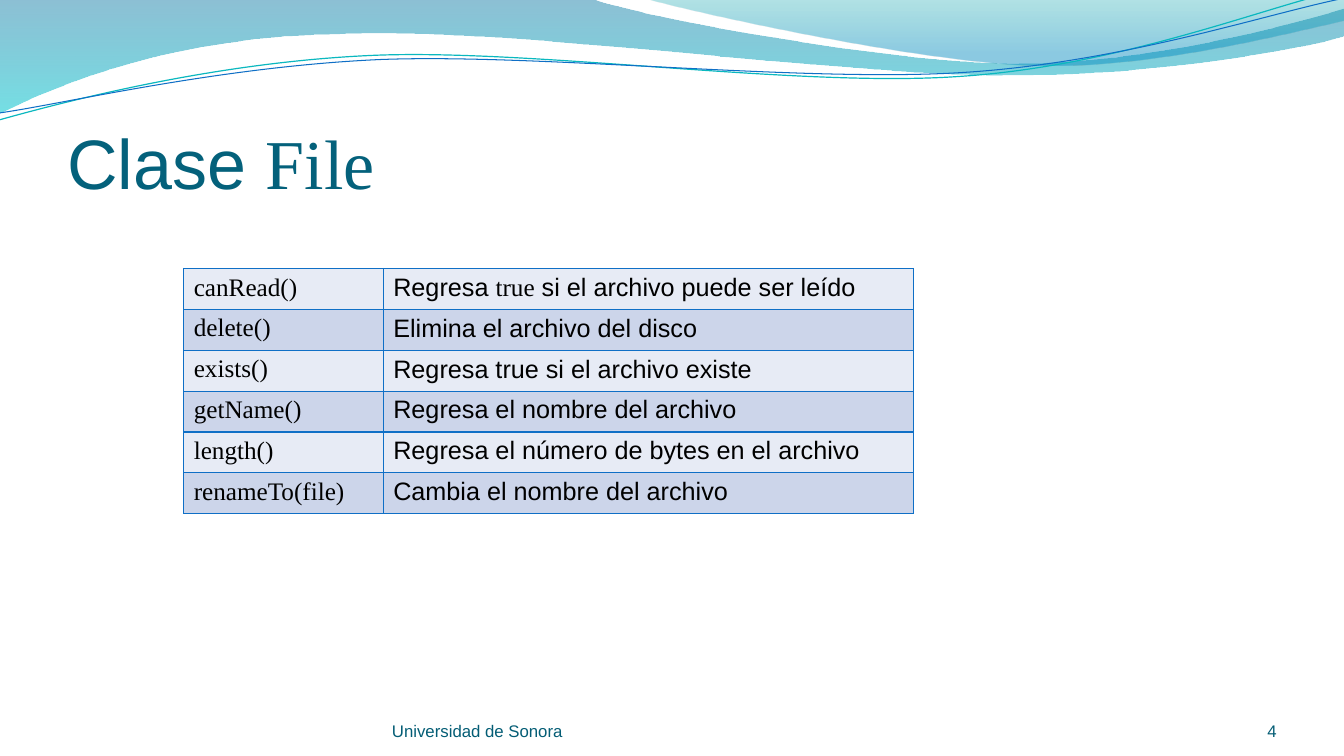
from dataclasses import dataclass

from lxml import etree
from pptx import Presentation
from pptx.dml.color import RGBColor
from pptx.enum.text import MSO_ANCHOR, PP_ALIGN
from pptx.oxml.ns import qn
from pptx.util import Pt

BOTTOM = MSO_ANCHOR.BOTTOM
LEFT, RIGHT = PP_ALIGN.LEFT, PP_ALIGN.RIGHT


@dataclass(frozen=True)
class Theme:
    sans: str = "Arial"
    serif: str = "Times New Roman"
    title_size: int = 50
    table_size: int = 18
    footer_size: int = 12
    title_color: str = "04617B"
    footer_color: str = "045D75"
    table_color: str = "000000"
    border_color: str = "0F6FC6"
    row_fills: tuple = ("E7EBF5", "CCD5EA")
    # Gradient stops: position, colour, opacity in percent
    wide_wave: tuple = ((0, "0074A1", 45), (1, "00C6CF", 55))
    right_wave: tuple = ((0, "00A1A9", 30), (0.8, "008BBF", 45))
    teal_line: str = "0AB8BF"
    blue_line: str = "0F6FC6"


def rgb(color):
    return RGBColor.from_string(color)


def write(text_frame, *runs, size, color, align=LEFT):
    """Fill the first paragraph with (text, font name) runs."""
    paragraph = text_frame.paragraphs[0]
    paragraph.alignment = align
    for text, font_name in runs:
        run = paragraph.add_run()
        run.text = text
        run.font.name = font_name
        run.font.size = Pt(size)
        run.font.color.rgb = rgb(color)


class SlideBuilder:
    def __init__(self, slide, theme):
        self.slide = slide
        self.theme = theme

    def outline(self, start, segments, close):
        """Draw line ends (x, y) and cubic curves (six numbers)."""
        builder = self.slide.shapes.build_freeform(*map(Pt, start))
        ends = [(Pt(segment[-2]), Pt(segment[-1])) for segment in segments]
        builder.add_line_segments(ends, close=close)
        shape = builder.convert_to_shape()
        shape.shadow.inherit = False
        # Bend the straight segments that have control points
        for element, segment in zip(list(shape.element.iter(qn("a:lnTo"))), segments):
            if len(segment) == 6:
                bend = etree.Element(qn("a:cubicBezTo"))
                for x, y in zip(segment[::2], segment[1::2]):
                    etree.SubElement(bend, qn("a:pt"), x=str(Pt(x) - shape.left),
                                     y=str(Pt(y) - shape.top))
                element.getparent().replace(element, bend)
        return shape

    def wave(self, start, segments, stops):
        shape = self.outline(start, segments, close=True)
        shape.line.fill.background()
        shape.fill.gradient()
        shape.fill.gradient_angle = 270
        for stop, (position, color, _) in zip(shape.fill.gradient_stops, stops):
            stop.position = position
            stop.color.rgb = rgb(color)
        for element, (_, _, opacity) in zip(shape.element.iter(qn("a:srgbClr")), stops):
            etree.SubElement(element, qn("a:alpha"), val=str(opacity * 1000))

    def curve(self, start, segments, color, width):
        shape = self.outline(start, segments, close=False)
        shape.fill.background()
        shape.line.color.rgb = rgb(color)
        shape.line.width = Pt(width)

    def text(self, box, *runs, bottom_margin=0, top_margin=0, **style):
        shape = self.slide.shapes.add_textbox(*map(Pt, box))
        frame = shape.text_frame
        frame.word_wrap = True
        frame.vertical_anchor = BOTTOM
        frame.margin_left = frame.margin_right = 0
        frame.margin_top, frame.margin_bottom = Pt(top_margin), Pt(bottom_margin)
        write(frame, *runs, **style)

    def border(self, cell, width):
        properties = cell._tc.get_or_add_tcPr()
        for side in ("lnL", "lnR", "lnT", "lnB"):
            line = etree.SubElement(properties, qn(f"a:{side}"), w=str(Pt(width)))
            fill = etree.SubElement(line, qn("a:solidFill"))
            etree.SubElement(fill, qn("a:srgbClr"), val=self.theme.border_color)

    def table(self, left, top, widths, row_height, rows):
        theme = self.theme
        frame = self.slide.shapes.add_table(
            len(rows), len(widths), Pt(left), Pt(top),
            Pt(sum(widths)), Pt(row_height * len(rows)))
        table = frame.table
        table.first_row = table.horz_banding = False
        for column, width in zip(table.columns, widths):
            column.width = Pt(width)
        for index, contents in enumerate(rows):
            table.rows[index].height = Pt(row_height)
            for cell, runs in zip(table.rows[index].cells, contents):
                self.border(cell, 1)
                cell.fill.solid()
                cell.fill.fore_color.rgb = rgb(theme.row_fills[index % 2])
                write(cell.text_frame, *runs, size=theme.table_size,
                      color=theme.table_color)


def main():
    presentation = Presentation()
    presentation.slide_width, presentation.slide_height = Pt(960), Pt(540)
    theme = Theme()
    slide = presentation.slides.add_slide(presentation.slide_layouts[6])
    builder = SlideBuilder(slide, theme)

    # Waves along the top edge
    builder.wave((0, 0), [
        (422.6, -0.7),
        (456.5, 12.2, 637.2, 45.4, 727.9, 45.4),
        (819.4, 45.4, 920.2, 18.7, 960, 6.5),
        (961.2, 25.9),
        (943.9, 31.7, 835.2, 54.7, 715.7, 54),
        (596.9, 54, 366.5, 20.2, 247, 24.5),
        (123.8, 25.9, 43.9, 59.8, -0.7, 81.4),
        (0, 0),
    ], theme.wide_wave)
    builder.wave((460, -0.7), [
        (488.9, 7.9, 654.5, 44.6, 738, 46.8),
        (821.5, 49.7, 923, 23, 960, 15.1),
        (960, 0),
        (460, -0.7),
    ], theme.right_wave)

    # Thin lines following the waves
    builder.curve((-0.7, 85.7), [
        (46.1, 72.7, 151.9, 44.6, 265.7, 39.6),
        (379.4, 34.6, 568.8, 62.6, 684, 54.7),
        (799.2, 47.5, 901.4, 5.8, 958.3, -7.2),
    ], theme.teal_line, 0.85)
    builder.curve((0, 80.6), [
        (45.4, 74.2, 157, 47.5, 272.2, 42.5),
        (386.6, 38.2, 573.1, 59, 687.6, 51.8),
        (802.8, 44.6, 903.6, 10.1, 960.5, -1.4),
    ], theme.blue_line, 0.75)

    # Title
    builder.text((48, 55.4, 864, 90), ("Clase ", theme.sans), ("File", theme.serif),
                 top_margin=3.6, size=theme.title_size, color=theme.title_color)

    # Methods of the class
    methods = [
        ("canRead()", [("Regresa ", theme.sans), ("true", theme.serif),
                       (" si el archivo puede ser leído", theme.sans)]),
        ("delete()", [("Elimina el archivo del disco", theme.sans)]),
        ("exists()", [("Regresa true si el archivo existe", theme.sans)]),
        ("getName()", [("Regresa el nombre del archivo", theme.sans)]),
        ("length()", [("Regresa el número de bytes en el archivo", theme.sans)]),
        ("renameTo(file)", [("Cambia el nombre del archivo", theme.sans)]),
    ]
    rows = [([(name, theme.serif)], description) for name, description in methods]
    builder.table(131.25, 191.75, (142.5, 378.75), 29.2, rows)

    # Footer and slide number
    footer = {"size": theme.footer_size, "color": theme.footer_color}
    builder.text((280, 500.5, 352, 28.75), ("Universidad de Sonora", theme.sans), **footer)
    builder.text((832, 500.5, 80, 28.75), ("4", theme.sans), align=RIGHT, **footer)

    presentation.save("out.pptx")


if __name__ == "__main__":
    main()
